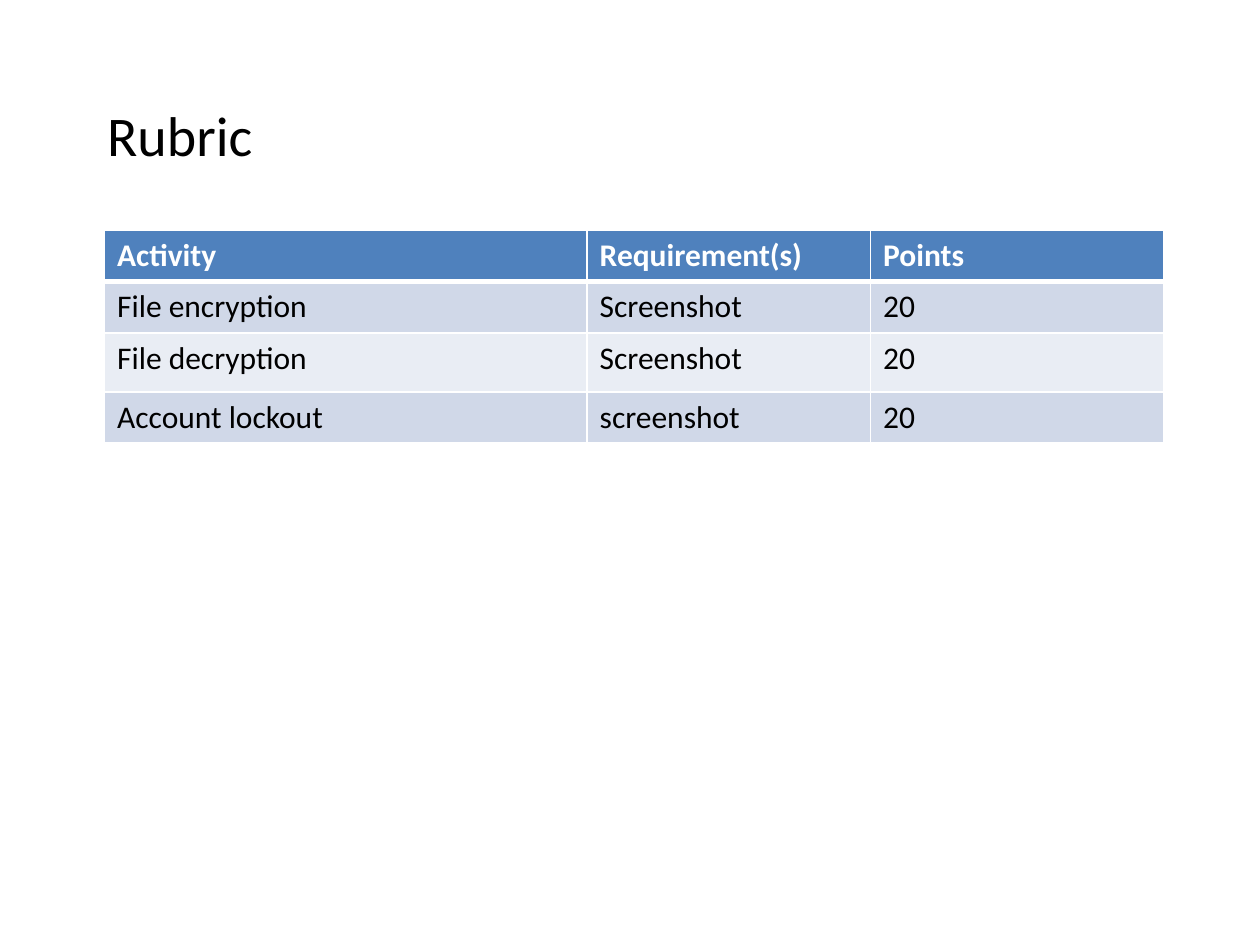
from dataclasses import dataclass

from lxml import etree
from pptx import Presentation
from pptx.dml.color import RGBColor
from pptx.enum.text import MSO_ANCHOR, MSO_AUTO_SIZE, PP_ALIGN
from pptx.oxml.ns import qn
from pptx.util import Inches, Pt

TOP = MSO_ANCHOR.TOP
LEFT = PP_ALIGN.LEFT
NO_AUTOFIT = MSO_AUTO_SIZE.NONE


@dataclass(frozen=True)
class Theme:
    font: str = "Calibri"
    title_size: float = 32
    table_size: float = 18
    text: str = "000000"
    header_text: str = "FFFFFF"
    header_fill: str = "4F81BD"
    band_fills: tuple = ("D0D8E8", "E9EDF4")
    border: str = "FFFFFF"
    border_width: float = 1
    header_rule_width: float = 3


class SlideBuilder:
    def __init__(self, presentation, theme):
        self.theme = theme
        self.slide = presentation.slides.add_slide(presentation.slide_layouts[5])

    def add_run(self, paragraph, text, size, color, bold=False):
        run = paragraph.add_run()
        run.text = text
        run.font.name = self.theme.font
        run.font.size = Pt(size)
        run.font.bold = bold
        run.font.color.rgb = RGBColor.from_string(color)

    def add_title(self, text, left, top, width, height):
        title = self.slide.shapes.title
        title.left, title.top = Inches(left), Inches(top)
        title.width, title.height = Inches(width), Inches(height)
        frame = title.text_frame
        frame.word_wrap = True
        frame.auto_size = NO_AUTOFIT
        frame.vertical_anchor = TOP
        paragraph = frame.paragraphs[0]
        paragraph.alignment = LEFT
        self.add_run(paragraph, text, self.theme.title_size, self.theme.text)

    def add_table(self, rows, left, top, column_widths, row_heights):
        shape = self.slide.shapes.add_table(
            len(rows), len(column_widths), Inches(left), Inches(top),
            Inches(sum(column_widths)), Inches(sum(row_heights)))
        table = shape.table
        for column, width in zip(table.columns, column_widths):
            column.width = Inches(width)
        for row_index, values in enumerate(rows):
            table.rows[row_index].height = Inches(row_heights[row_index])
            for column_index, value in enumerate(values):
                self.format_cell(table.cell(row_index, column_index), value, row_index)

    def format_cell(self, cell, text, row_index):
        theme = self.theme
        is_header = row_index == 0
        fill = theme.header_fill if is_header else theme.band_fills[(row_index - 1) % 2]
        color = theme.header_text if is_header else theme.text
        self.add_run(cell.text_frame.paragraphs[0], text, theme.table_size, color, is_header)
        top_width = theme.header_rule_width if row_index == 1 else theme.border_width
        bottom_width = theme.header_rule_width if is_header else theme.border_width
        self.add_border(cell, "a:lnL", theme.border_width)
        self.add_border(cell, "a:lnR", theme.border_width)
        self.add_border(cell, "a:lnT", top_width)
        self.add_border(cell, "a:lnB", bottom_width)
        cell.fill.solid()
        cell.fill.fore_color.rgb = RGBColor.from_string(fill)

    def add_border(self, cell, tag, width):
        properties = cell._tc.get_or_add_tcPr()
        line = etree.SubElement(properties, qn(tag), w=str(Pt(width)))
        fill = etree.SubElement(line, qn("a:solidFill"))
        etree.SubElement(fill, qn("a:srgbClr"), val=self.theme.border)


def main():
    presentation = Presentation()
    presentation.slide_width = Inches(10)
    presentation.slide_height = Inches(7.5)
    builder = SlideBuilder(presentation, Theme())
    builder.add_title("Rubric", 0.75, 0.75, 9, 4.95)
    rubric = [
        ("Activity", "Requirement(s)", "Points"),
        ("File encryption", "Screenshot", "20"),
        ("File decryption", "Screenshot", "20"),
        ("Account lockout", "screenshot", "20"),
    ]
    builder.add_table(rubric, 0.83, 1.83, (3.83, 2.25, 2.33), (0.4, 0.4, 0.47, 0.4))
    presentation.save("out.pptx")


if __name__ == "__main__":
    main()
